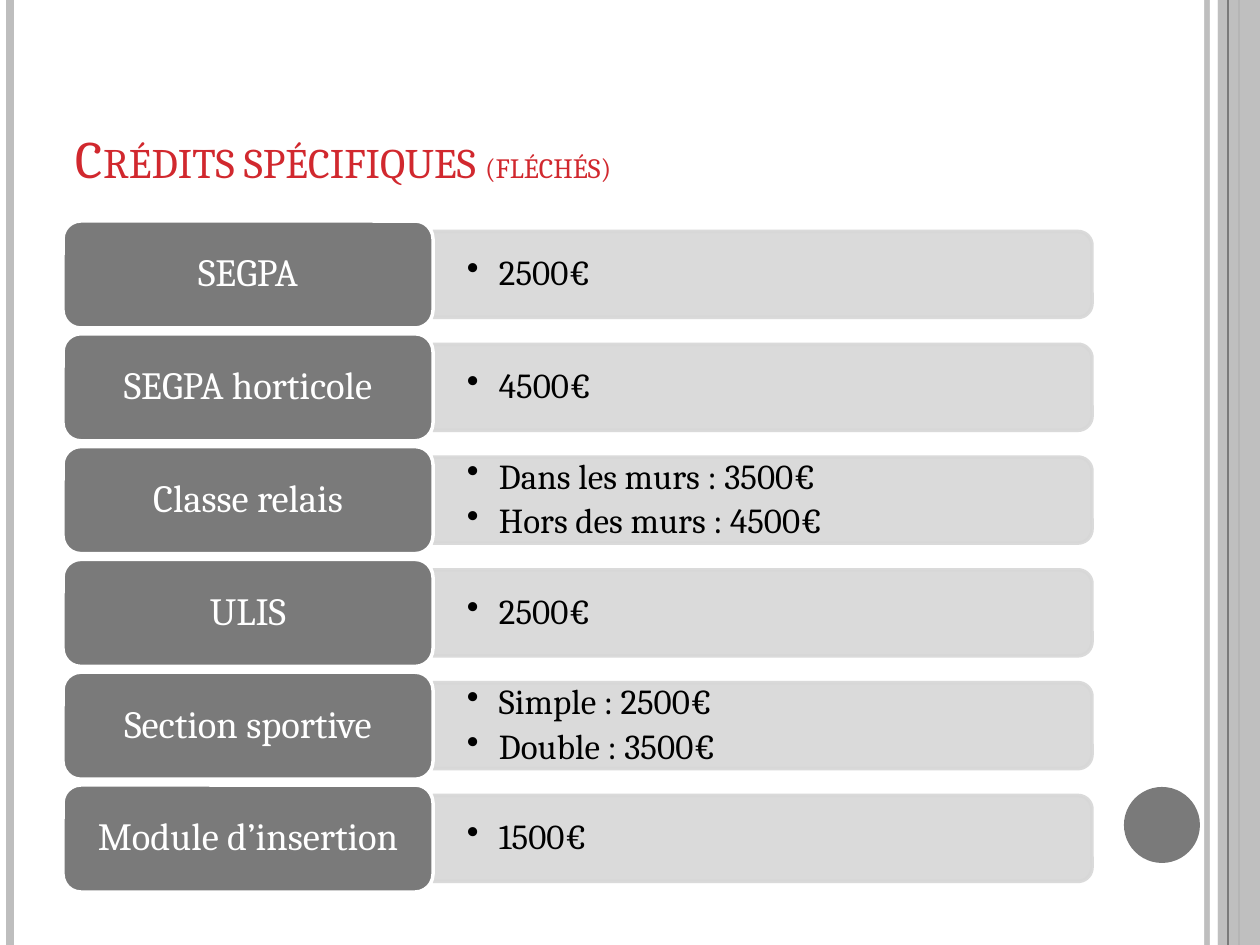
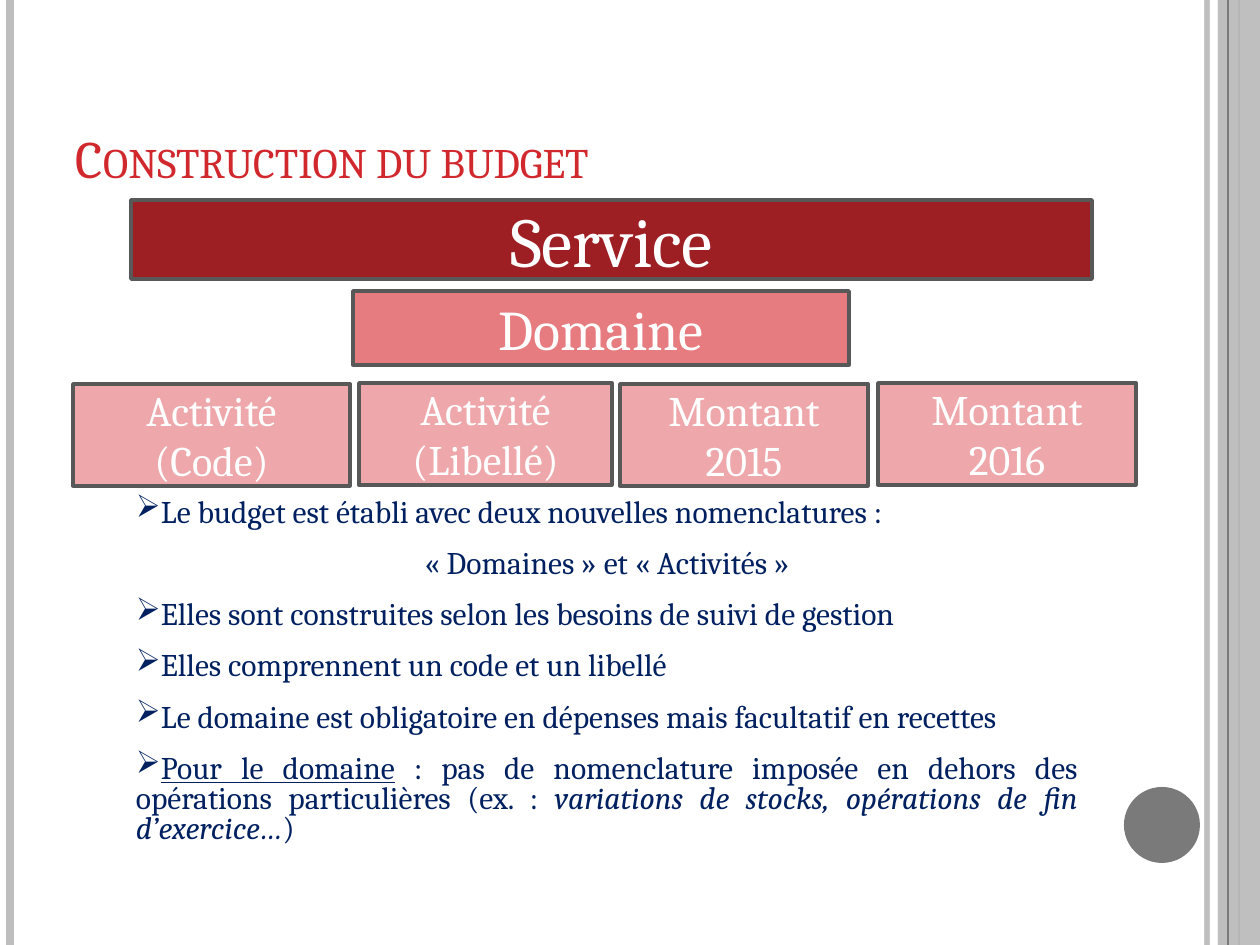
import math
from lxml import etree
from pptx import Presentation
from pptx.dml.color import RGBColor
from pptx.enum.shapes import MSO_CONNECTOR, MSO_SHAPE
from pptx.enum.text import MSO_ANCHOR, PP_ALIGN
from pptx.oxml.ns import qn
from pptx.util import Emu, Pt

RECT, ROUNDED, OVAL = MSO_SHAPE.RECTANGLE, MSO_SHAPE.ROUNDED_RECTANGLE, MSO_SHAPE.OVAL
STRAIGHT = MSO_CONNECTOR.STRAIGHT
LEFT, CENTER, JUSTIFY = PP_ALIGN.LEFT, PP_ALIGN.CENTER, PP_ALIGN.JUSTIFY
MIDDLE, BOTTOM, TOP = MSO_ANCHOR.MIDDLE, MSO_ANCHOR.BOTTOM, MSO_ANCHOR.TOP

FONT = "Cambria"
WIDTH, HEIGHT = 1260, 945
COLORS = {
    "rail": "BEBEBE", "dark": "7A7A7A", "title": "D1282E", "band": "D7D7D7",
    "white": "FFFFFF", "black": "000000", "navy": "002060", "border": "585858",
    "service": "9D1E23", "domain": "E67C7F", "column": "EEA7AA",
}


def px(n):
    return Emu(round(n * 914400 / 126))


def rgb(name):
    return RGBColor.from_string(COLORS[name])


def set_alpha(fill, percent):
    """Make a solid fill (of a shape or a line) partly transparent."""
    color = fill._xPr.find(qn("a:solidFill"))[0]
    etree.SubElement(color, qn("a:alpha")).set("val", str(percent * 1000))


def style(sp, fill, line=None, alpha=100):
    sp.shadow.inherit = False
    sp.fill.solid()
    sp.fill.fore_color.rgb = rgb(fill)
    if line:
        sp.line.color.rgb = rgb(line)
        sp.line.width = Pt(2)
    else:
        sp.line.fill.background()
    if alpha < 100:
        set_alpha(sp.fill, alpha)
        if line:
            set_alpha(sp.line.fill, alpha)


def add_box(s, kind, box, fill, line=None, alpha=100):
    sp = s.shapes.add_shape(kind, *map(px, box))
    style(sp, fill, line, alpha)
    return sp


def frame(sp, anchor, insets=(13, 6, 13, 6)):
    tf = sp.text_frame
    tf.word_wrap = True
    tf.vertical_anchor = anchor
    tf.margin_left, tf.margin_top, tf.margin_right, tf.margin_bottom = map(px, insets)
    return tf


def write(tf, paragraphs, size, color, align=LEFT, spacing=None, after=0,
          bullet=None, indent=0):
    """Each paragraph is a list of (text, font attributes) runs."""
    for i, runs in enumerate(paragraphs):
        p = tf.paragraphs[0] if i == 0 else tf.add_paragraph()
        p.alignment, p.space_after = align, Pt(after)
        if spacing:
            p.line_spacing = spacing
        if bullet:
            set_bullet(p, bullet, indent)
        for text, attributes in runs:
            r = p.add_run()
            r.text = text
            r.font.name, r.font.size, r.font.color.rgb = FONT, Pt(size), rgb(color)
            for name, value in attributes.items():
                setattr(r.font, name, value)


def set_bullet(p, char, indent):
    pPr = p._p.get_or_add_pPr()
    pPr.set("marL", str(px(indent)))
    pPr.set("indent", str(-px(indent)))
    etree.SubElement(pPr, qn("a:buChar")).set("char", char)


def plain(lines):
    return [[(line, {})] for line in lines]


# Shared frame: side rails, page dot and title
def add_rail(s, x, color, width, alpha=100):
    cx = s.shapes.add_connector(STRAIGHT, px(x), 0, px(x), px(HEIGHT))
    cx.line.color.rgb = rgb(color)
    cx.line.width = Pt(width)
    if alpha < 100:
        set_alpha(cx.line.fill, alpha)
    etree.SubElement(cx._element.spPr, qn("a:effectLst"))


def add_frame(s):
    strip = (1218, 0, 42, HEIGHT)
    add_rail(s, 1207, "rail", 3, 93)
    add_box(s, RECT, strip, "rail", alpha=87)
    add_rail(s, 1207, "rail", 3, 93)
    add_rail(s, 10, "rail", 4.5)
    add_rail(s, 1239, "dark", 1.5)
    add_box(s, RECT, strip, "rail", alpha=87)
    add_rail(s, 1228, "dark", 0.75)
    add_box(s, OVAL, (1124, 787, 76, 76), "dark")


def add_title(s, runs):
    tf = frame(s.shapes.add_textbox(*map(px, (63, 38, 1029, 157))), BOTTOM)
    write(tf, [runs], 30, "title")
    for r in tf.paragraphs[0].runs:
        r.font._element.set("cap", "small")


def new_slide(prs, *title):
    s = prs.slides.add_slide(prs.slide_layouts[6])
    add_frame(s)
    add_title(s, title)
    return s


# Credit list: a dark label and a pale band in each row
def add_band(s, x, y, w, h, radius=14):
    """Band with square left corners and round right corners."""
    turns = [math.radians(a) for a in range(-90, 91, 10)]
    points = [(x, y)]
    for a in turns:
        cy = y + radius if a < 0 else y + h - radius
        points.append((x + w - radius + radius * math.cos(a), cy + radius * math.sin(a)))
    points.append((x, y + h))
    points = [(px(a), px(b)) for a, b in points]
    builder = s.shapes.build_freeform(*points[0], scale=1.0)
    builder.add_line_segments(points[1:], close=True)
    sp = builder.convert_to_shape()
    style(sp, "band", "band", 90)
    return sp


def add_credit_list(s, box, credits):
    x, y, w, h = box
    label_w, label_h, band_h = 370, 107, 86
    pitch = (h - label_h) / (len(credits) - 1)
    for i, (label, amounts) in enumerate(credits):
        top = y + i * pitch
        band = add_band(s, x + label_w, top + (label_h - band_h) / 2,
                        w - label_w, band_h)
        write(frame(band, MIDDLE, (34, 21, 38, 21)), plain(amounts), 20, "black",
              spacing=0.9, after=4, bullet="•", indent=32)
        sp = add_box(s, ROUNDED, (x, top, label_w, label_h), "dark", "white")
        write(frame(sp, MIDDLE, (11, 6, 11, 6)), plain([label]), 22, "white",
              CENTER, spacing=0.9, after=9)


# Budget structure: service, domain, then four columns
def add_budget_levels(s, box):
    x, y, _, _ = box
    column = ("column", 24)
    levels = [
        ((58, 0, 961, 79), "service", 40, ["Service"]),
        ((280, 91, 496, 74), "domain", 32, ["Domaine"]),
        ((0, 184, 277, 102), *column, ["Activité", "(Code)"]),
        ((286, 183, 253, 102), *column, ["Activité", "(Libellé)"]),
        ((547, 184, 248, 102), *column, ["Montant 2015"]),
        ((805, 183, 258, 102), *column, ["Montant 2016"]),
    ]
    for (dx, dy, w, h), fill, size, lines in levels:
        sp = add_box(s, RECT, (x + dx, y + dy, w, h), fill, "border")
        write(frame(sp, MIDDLE), plain(lines), size, "white", CENTER)


def add_budget_notes(s, box):
    tf = frame(s.shapes.add_textbox(*map(px, box)), TOP)
    notes = plain([
        "Le budget est établi avec deux nouvelles nomenclatures :",
        "« Domaines » et « Activités »",
        "Elles sont construites selon les besoins de suivi de gestion",
        "Elles comprennent un code et un libellé",
        "Le domaine est obligatoire en dépenses mais facultatif en recettes",
    ])
    notes.append([
        ("Pour le domaine", {"underline": True}),
        (" : pas de nomenclature imposée en dehors des opérations particulières (ex. : ", {}),
        ("variations de stocks, opérations de fin d’exercice…", {"italic": True}),
        (")", {}),
    ])
    write(tf, notes, 18, "navy", JUSTIFY, spacing=0.8, after=12, bullet="➢")
    # The names of the nomenclatures stand centred, without a bullet
    names = tf.paragraphs[1]
    names.alignment = CENTER
    pPr = names._p.get_or_add_pPr()
    pPr.remove(pPr.find(qn("a:buChar")))


def main():
    prs = Presentation()
    prs.slide_width, prs.slide_height = px(WIDTH), px(HEIGHT)

    s = new_slide(prs, ("Crédits spécifiques ", {}), ("(fléchés)", {"size": Pt(20)}))
    add_credit_list(s, (63, 221, 1029, 671), [
        ("SEGPA", ["2500€"]),
        ("SEGPA horticole", ["4500€"]),
        ("Classe relais", ["Dans les murs : 3500€", "Hors des murs : 4500€"]),
        ("ULIS", ["2500€"]),
        ("Section sportive", ["Simple : 2500€", "Double : 3500€"]),
        ("Module d’insertion", ["1500€"]),
    ])

    s = new_slide(prs, ("Construction du budget", {}))
    add_budget_notes(s, (123, 493, 968, 393))
    add_budget_levels(s, (73, 200, 1063, 286))

    prs.save("out.pptx")


if __name__ == "__main__":
    main()
